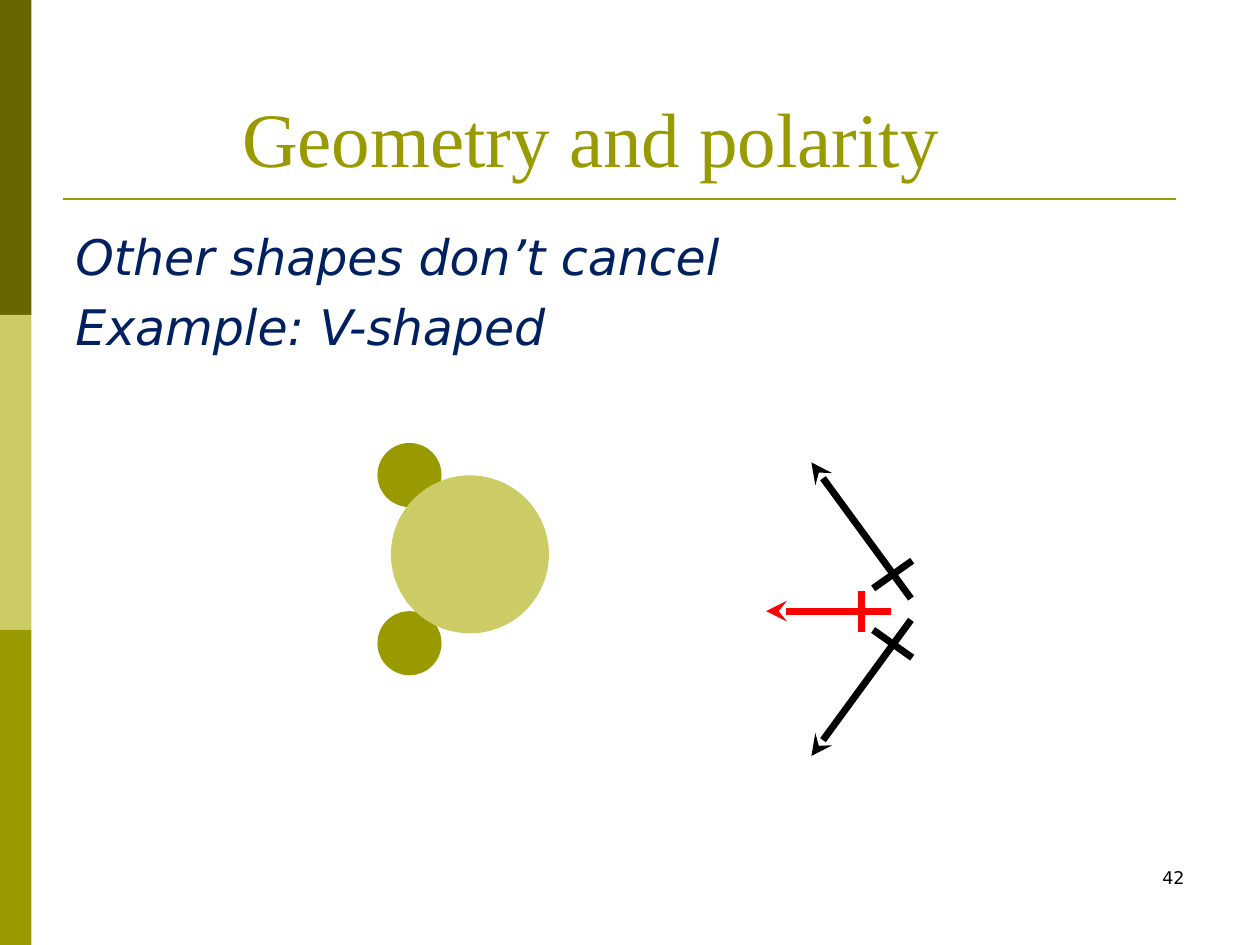
from dataclasses import dataclass

import pptx
import pptx.dml.color
import pptx.enum.shapes
import pptx.enum.text
import pptx.util
from lxml import etree
from pptx.oxml.ns import qn

Shapes = pptx.enum.shapes.MSO_SHAPE
Align = pptx.enum.text.PP_ALIGN
Anchor = pptx.enum.text.MSO_ANCHOR
Pt = pptx.util.Pt

COLUMNS, ROWS = 40, 30  # square grid cells of a quarter inch
CELL = pptx.util.Inches(0.25)


@dataclass(frozen=True)
class Theme:
    dark: str = "666600"
    olive: str = "999900"
    light: str = "CCCC66"
    navy: str = "002060"
    black: str = "000000"
    red: str = "FF0000"
    serif: str = "Times New Roman"
    sans: str = "DejaVu Sans"
    title_size: float = 44
    body_size: float = 28
    number_size: float = 10
    body_gap: float = 6.5
    rule_width: float = 1.5
    arrow_width: float = 4
    outline_width: float = 1


THEME = Theme()


@dataclass(frozen=True)
class Atom:
    column: float
    row: float
    diameter: float
    color: str


@dataclass(frozen=True)
class Stroke:
    start: tuple[float, float]
    end: tuple[float, float]
    color: str
    width: float = THEME.arrow_width
    arrow: bool = False


@dataclass(frozen=True)
class TextStyle:
    size: float
    font: str
    color: str
    italic: bool = False
    align: Align = Align.LEFT
    gap: float = 0


def grid(cells: float) -> int:
    return round(cells * CELL)


def rgb(color: str) -> pptx.dml.color.RGBColor:
    return pptx.dml.color.RGBColor.from_string(color)


def place(box, column: float, row: float, width: float, height: float) -> None:
    box.left, box.top = grid(column), grid(row)
    box.width, box.height = grid(width), grid(height)


def add_filled(page, kind: Shapes, area: tuple, color: str, outlined: bool = False):
    shape = page.shapes.add_shape(kind, *map(grid, area))
    shape.shadow.inherit = False
    shape.fill.solid()
    shape.fill.fore_color.rgb = rgb(color)
    if outlined:
        shape.line.color.rgb = rgb(color)
        shape.line.width = Pt(THEME.outline_width)
    else:
        shape.line.fill.background()


def add_atom(page, atom: Atom) -> None:
    radius = atom.diameter / 2
    area = (atom.column - radius, atom.row - radius, atom.diameter, atom.diameter)
    add_filled(page, Shapes.OVAL, area, atom.color, outlined=True)


def add_stroke(page, stroke: Stroke) -> None:
    line = page.shapes.add_connector(
        pptx.enum.shapes.MSO_CONNECTOR.STRAIGHT, *map(grid, stroke.start + stroke.end))
    line.line.color.rgb = rgb(stroke.color)
    line.line.width = Pt(stroke.width)
    if stroke.arrow:
        etree.SubElement(line.line._get_or_add_ln(), qn("a:tailEnd"), type="stealth")
    etree.SubElement(line._element.spPr, qn("a:effectLst"))


def write(box, lines: list[str], style: TextStyle, anchor: Anchor = Anchor.TOP) -> None:
    frame = box.text_frame
    frame.word_wrap = True
    frame.auto_size = pptx.enum.text.MSO_AUTO_SIZE.NONE
    frame.vertical_anchor = anchor
    for index, line in enumerate(lines):
        para = frame.add_paragraph() if index else frame.paragraphs[0]
        para.alignment = style.align
        para.space_before = Pt(style.gap)
        span = para.add_run()
        span.text = line
        span.font.size = Pt(style.size)
        span.font.name = style.font
        span.font.italic = style.italic
        span.font.color.rgb = rgb(style.color)


def bond_dipole(axis: float, side: int) -> list[Stroke]:
    """Crossed arrow above (side -1) or below (side 1) the axis row."""
    return [
        Stroke((28.92, axis + side * 0.34), (25.76, axis + side * 4.66),
               THEME.black, arrow=True),
        Stroke((27.72, axis + side * 0.66), (28.96, axis + side * 1.54), THEME.black),
    ]


def main() -> None:
    deck = pptx.Presentation()
    deck.slide_width, deck.slide_height = grid(COLUMNS), grid(ROWS)
    page = deck.slides.add_slide(deck.slide_layouts[5])

    band = ROWS / 3
    for index, color in enumerate((THEME.dark, THEME.light, THEME.olive)):
        add_filled(page, Shapes.RECTANGLE, (0, index * band, 1, band), color)
    add_stroke(page, Stroke((2, 6.32), (37.32, 6.32), THEME.olive, THEME.rule_width))

    title = page.shapes.title
    place(title, 1.76, 2.92, 34, 3.08)
    write(title, ["Geometry and polarity"],
          TextStyle(THEME.title_size, THEME.serif, THEME.olive, align=Align.CENTER),
          Anchor.BOTTOM)

    body = page.shapes.add_textbox(*map(grid, (2, 7, 36, 19.8)))
    write(body, ["Other shapes don’t cancel", "Example: V-shaped"],
          TextStyle(THEME.body_size, THEME.sans, THEME.navy, italic=True,
                    gap=THEME.body_gap))

    number = page.shapes.add_textbox(*map(grid, (28.68, 27.32, 9.32, 2)))
    write(number, ["42"],
          TextStyle(THEME.number_size, THEME.sans, THEME.black, align=Align.RIGHT))

    for atom in (Atom(13, 15.08, 1.98, THEME.olive),
                 Atom(13, 20.42, 1.98, THEME.olive),
                 Atom(14.92, 17.6, 4.96, THEME.light)):
        add_atom(page, atom)

    axis = 19.34
    net_dipole = [
        Stroke((28.28, 19.4), (24.32, 19.4), THEME.red, arrow=True),
        Stroke((27.36, 18.76), (27.36, 20.08), THEME.red),
    ]
    for stroke in bond_dipole(axis, -1) + bond_dipole(axis, 1) + net_dipole:
        add_stroke(page, stroke)

    deck.save("out.pptx")


if __name__ == "__main__":
    main()
